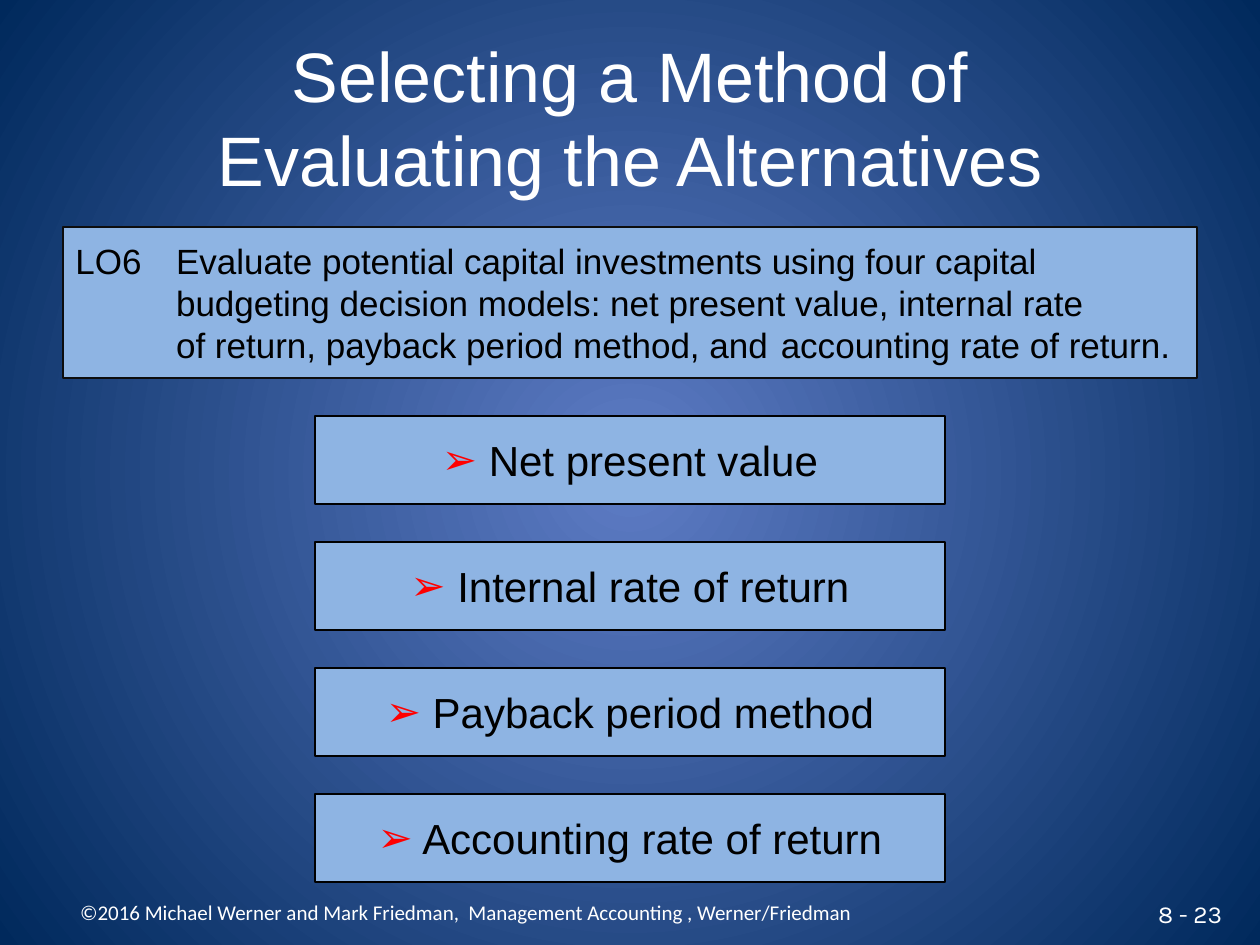
from lxml.etree import SubElement
from pptx import Presentation
from pptx.dml.color import RGBColor
from pptx.enum.shapes import MSO_SHAPE
from pptx.enum.text import MSO_ANCHOR, PP_ALIGN
from pptx.oxml.ns import qn
from pptx.util import Cm, Pt


def rgb(value):
    return RGBColor.from_string(value)


def write(sp, *lines, size=24, font="Arial", color="000000", align=PP_ALIGN.LEFT, wrap=True):
    """Fill a shape with one paragraph per line, and return the paragraphs."""
    tf = sp.text_frame
    tf.word_wrap = wrap
    tf.vertical_anchor = MSO_ANCHOR.MIDDLE
    tf.text = "\n".join(lines)
    for p in tf.paragraphs:
        p.alignment = align
        for r in p.runs:
            r.font.size = Pt(size)
            r.font.name = font
            r.font.color.rgb = rgb(color)
    return tf.paragraphs


prs = Presentation()
prs.slide_width, prs.slide_height = Cm(25.4), Cm(19.05)
s = prs.slides.add_slide(prs.slide_layouts[5])

# Background: radial gradient, light in the centre
fill = s.background.fill
fill.gradient()
for stop, color, position in zip(fill.gradient_stops, ("5E7CC5", "00295C"), (0, 1)):
    stop.color.rgb = rgb(color)
    stop.position = position
grad = s.element.find(".//" + qn("a:gradFill"))
grad.remove(grad.find(qn("a:lin")))
radial = SubElement(grad, qn("a:path"), path="circle")
SubElement(radial, qn("a:fillToRect"), l="50000", t="50000", r="50000", b="50000")

# Title
title = s.shapes.title
title.left, title.top, title.width, title.height = Cm(1.27), Cm(0.76), Cm(22.86), Cm(3.18)
write(title, "Selecting a Method of\vEvaluating the Alternatives",
      size=40, color="FFFFFF", align=PP_ALIGN.CENTER)

# Learning objective, then the four methods at equal steps
boxes = [(1.27, 4.57, 22.86, 3.05, "0D0D0D")]
boxes += [(6.35, 8.38 + 2.54 * i, 12.7, 1.78, "000000") for i in range(4)]
panels = []
for left, top, width, height, line in boxes:
    sp = s.shapes.add_shape(MSO_SHAPE.RECTANGLE, Cm(left), Cm(top), Cm(width), Cm(height))
    sp.shadow.inherit = False
    sp.fill.solid()
    sp.fill.fore_color.rgb = rgb("8EB4E3")
    sp.line.color.rgb = rgb(line)
    sp.line.width = Pt(1)
    panels.append(sp)
objective, *methods = panels

for p in write(objective,
               "LO6\tEvaluate potential capital investments using four capital",
               "\tbudgeting decision models: net present value, internal rate",
               "\tof return, payback period method, and\taccounting rate of return.",
               size=20):
    tabs = SubElement(p._p.get_or_add_pPr(), qn("a:tabLst"))
    for stop in (2.03, 14.22):
        SubElement(tabs, qn("a:tab"), pos=str(Cm(stop)), algn="l")

names = ("Net present value", "Internal rate of return",
         "Payback period method", "Accounting rate of return")
for sp, name in zip(methods, names):
    for p in write(sp, " " + name, align=PP_ALIGN.CENTER):
        pPr = p._p.get_or_add_pPr()
        SubElement(SubElement(pPr, qn("a:buClr")), qn("a:srgbClr"), val="FF0000")
        SubElement(pPr, qn("a:buFont"), typeface="Arial")
        SubElement(pPr, qn("a:buChar"), char="➢")

# Footer and page number
footer = s.shapes.add_textbox(Cm(1.27), Cm(17.73), Cm(19.05), Cm(1.32))
write(footer, " ©2016 Michael Werner and Mark Friedman,  Management Accounting , Werner/Friedman",
      size=12, font="Calibri", color="FFFFFF")
number = s.shapes.add_textbox(Cm(22.86), Cm(18.03), Cm(2.03), Cm(0.76))
write(number, "8 - 23", size=14, font="Karla", color="FFFFFF", align=PP_ALIGN.RIGHT, wrap=False)

prs.save("out.pptx")
